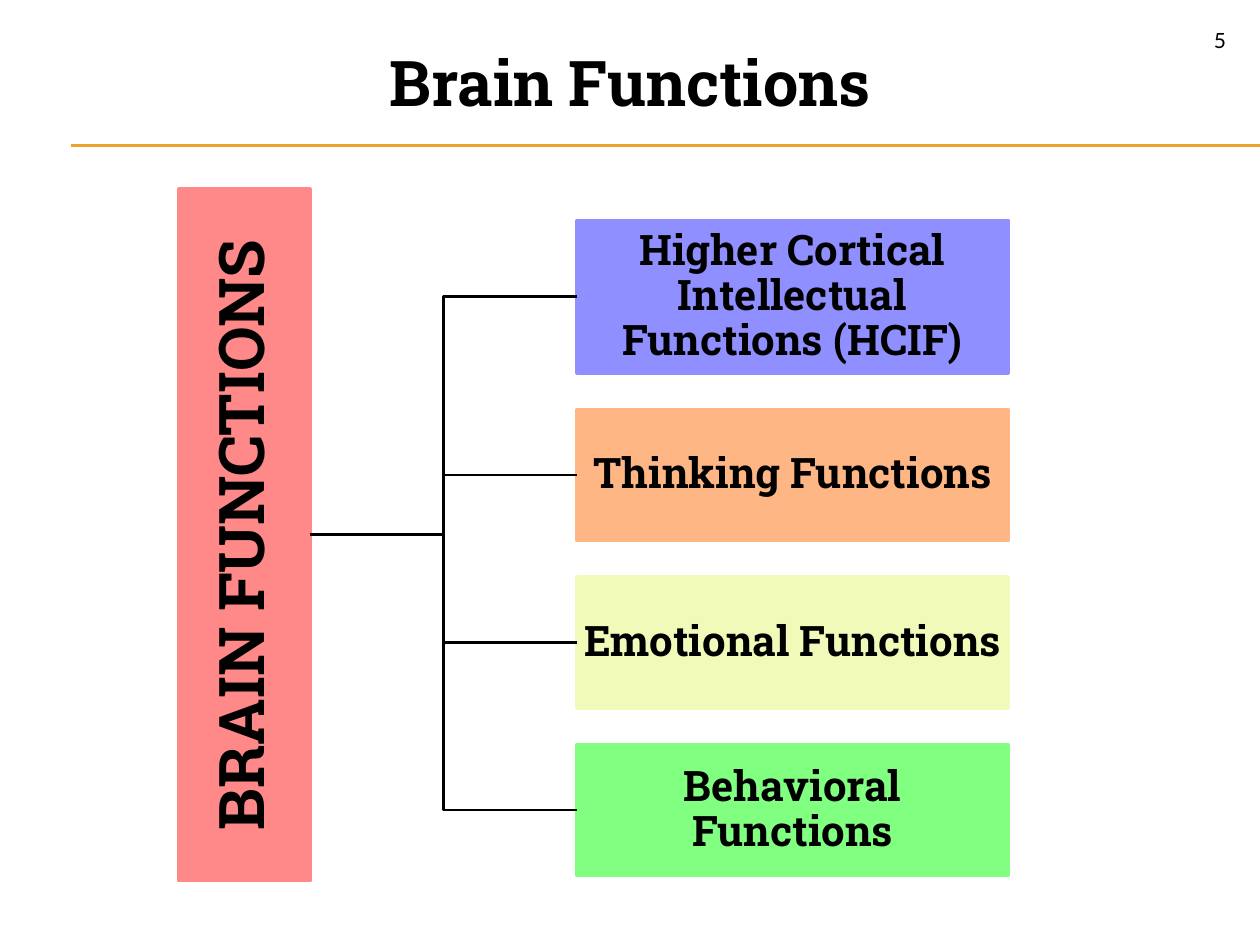
from dataclasses import dataclass

from pptx import Presentation
from pptx.dml.color import RGBColor
from pptx.enum.shapes import MSO_CONNECTOR, MSO_SHAPE
from pptx.enum.text import MSO_ANCHOR, MSO_AUTO_SIZE, PP_ALIGN
from pptx.oxml.ns import qn
from pptx.util import Inches, Pt


@dataclass(frozen=True)
class Theme:
    """Colours, fonts and type sizes of the slide."""

    ink: str = "000000"
    rule: str = "F0A22E"
    root: str = "FF8989"
    cortical: str = "8F8FFF"
    thinking: str = "FFB685"
    emotional: str = "F1FAB8"
    behavioral: str = "81FF81"
    heading_font: str = "Roboto Slab"
    number_font: str = "Lato"
    heading_size: int = 36
    branch_size: int = 24
    number_size: int = 12


THEME = Theme()


def write_text(frame, text, *, size, font=THEME.heading_font, bold=True,
               align=PP_ALIGN.CENTER, anchor=MSO_ANCHOR.MIDDLE,
               spacing=None, inset=None):
    """Fill a text frame with one formatted paragraph."""
    frame.word_wrap = True
    frame.auto_size = MSO_AUTO_SIZE.NONE
    frame.vertical_anchor = anchor
    if inset is not None:
        frame.margin_left = frame.margin_right = Inches(inset)
        frame.margin_top = frame.margin_bottom = Inches(inset)
    paragraph = frame.paragraphs[0]
    paragraph.alignment = align
    paragraph.line_spacing = spacing
    run = paragraph.add_run()
    run.text = text
    run.font.name = font
    run.font.size = Pt(size)
    run.font.bold = bold
    run.font.color.rgb = RGBColor.from_string(THEME.ink)


def add_title(slide, text):
    """Place the title across the full slide width."""
    title = slide.shapes.title
    title.left, title.top = Inches(0), Inches(0.29)
    title.width, title.height = Inches(10), Inches(0.71)
    write_text(title.text_frame, text, size=THEME.heading_size)


def add_page_number(slide, number):
    """Write the page number in the top right corner."""
    corner = slide.shapes.add_textbox(Inches(9), Inches(0.17), Inches(0.83), Inches(0.27))
    write_text(corner.text_frame, number, size=THEME.number_size, font=THEME.number_font,
               bold=False, align=PP_ALIGN.RIGHT, anchor=MSO_ANCHOR.TOP)


def add_line(slide, kind, start, end, color, weight):
    """Draw a connector without shadow between two points in inches."""
    line = slide.shapes.add_connector(kind, *map(Inches, start + end))
    line.line.color.rgb = RGBColor.from_string(color)
    line.line.width = Pt(weight)
    properties = line._element.spPr
    properties.append(properties.makeelement(qn("a:effectLst"), {}))
    return line


def add_box(slide, text, left, top, width, height, color, size, inset):
    """Draw a filled rectangle holding a centred label."""
    box = slide.shapes.add_shape(MSO_SHAPE.RECTANGLE,
                                 *map(Inches, (left, top, width, height)))
    box.shadow.inherit = False
    box.fill.solid()
    box.fill.fore_color.rgb = RGBColor.from_string(color)
    box.line.color.rgb = RGBColor.from_string(color)
    box.line.width = Pt(2)
    write_text(box.text_frame, text, size=size, spacing=0.9, inset=inset)
    return box


def add_hierarchy(slide, root_text, branches):
    """Draw the upright root box and its stacked branches joined by elbows."""
    root = add_box(slide, root_text, 1.42, 1.5, 1.04, 5.49,
                   THEME.root, THEME.heading_size, 0.03)
    root.text_frame._txBody.bodyPr.set("vert", "vert270")
    top, gap = 1.75, 0.29
    for text, color, height in branches:
        branch = add_box(slide, text, 4.58, top, 3.42, height,
                         color, THEME.branch_size, 0.02)
        elbow = add_line(slide, MSO_CONNECTOR.ELBOW, (2.46, 4.25),
                         (4.58, top + height / 2), THEME.ink, 1.5)
        elbow.begin_connect(root, 3)
        elbow.end_connect(branch, 1)
        top += height + gap


def main():
    """Build and save the slide."""
    deck = Presentation()
    deck.slide_width, deck.slide_height = Inches(10), Inches(7.5)
    slide = deck.slides.add_slide(deck.slide_layouts[5])
    for y in (1.15, 1.16):
        add_line(slide, MSO_CONNECTOR.STRAIGHT, (0.56, y), (10, y), THEME.rule, 0.75)
    add_hierarchy(slide, "BRAIN FUNCTIONS", [
        ("Higher Cortical Intellectual Functions (HCIF)", THEME.cortical, 1.21),
        ("Thinking Functions", THEME.thinking, 1.04),
        ("Emotional Functions", THEME.emotional, 1.04),
        ("Behavioral Functions", THEME.behavioral, 1.04),
    ])
    add_title(slide, "Brain Functions")
    add_page_number(slide, "5")
    deck.save("out.pptx")


if __name__ == "__main__":
    main()
